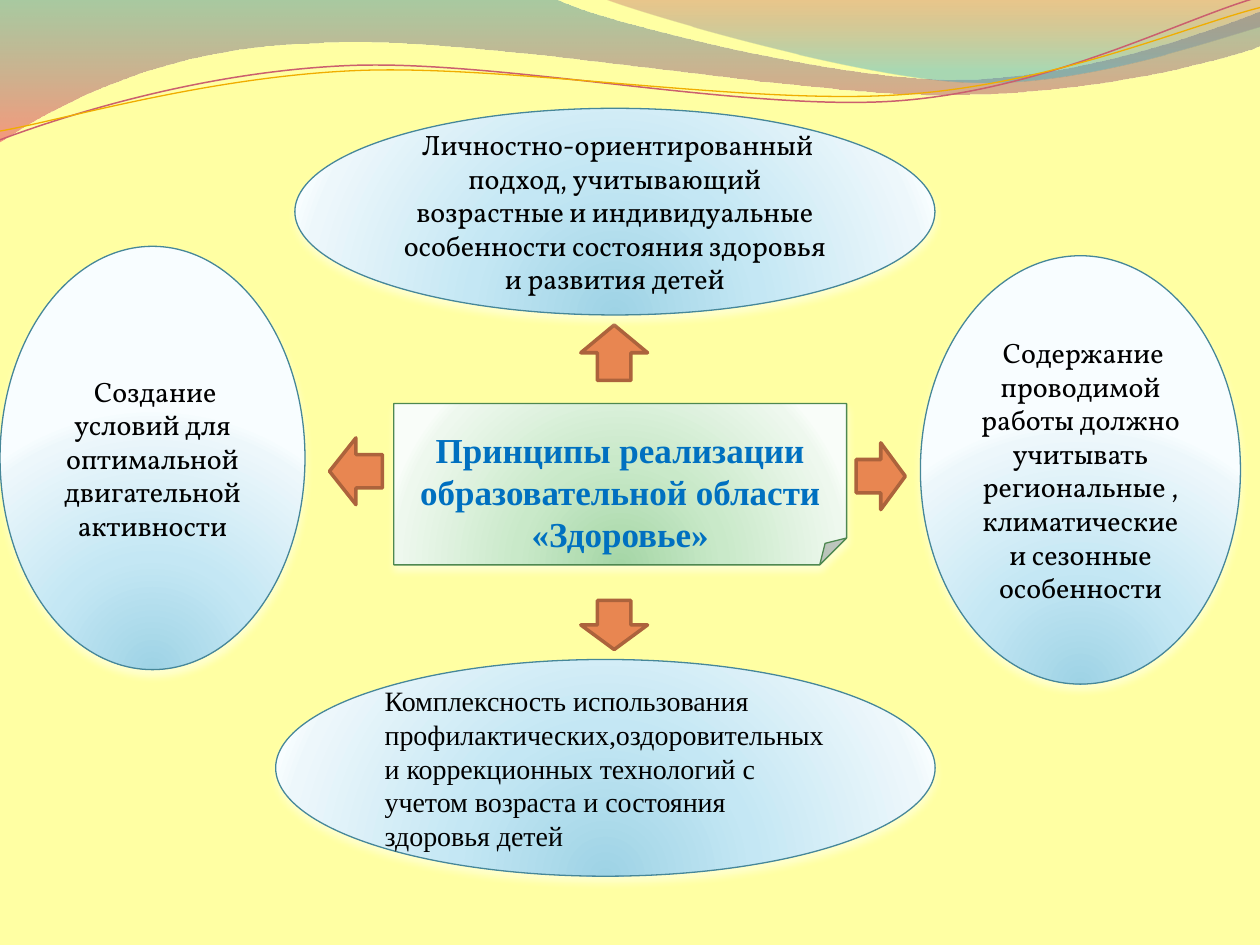
from math import cos, radians, sin

from lxml.etree import SubElement
from pptx import Presentation
from pptx.dml.color import RGBColor
from pptx.enum.shapes import MSO_SHAPE
from pptx.enum.text import MSO_ANCHOR, PP_ALIGN
from pptx.oxml.ns import qn
from pptx.util import Inches, Pt

# The slide is a grid of 100 columns and 75 rows of square cells.
COLUMNS, ROWS = 100, 75
CELL = Inches(0.1)
STRAND_TILT = -2.7

COLORS = {
    "background": "FFFFA3", "text": "000000", "title": "0070C0",
    "arrow": "E88651", "arrow_line": "AC633C",
    "ellipse_line": "468798", "note_line": "4E8850", "glow": "FFFFFF",
    "rose_line": "CB5F6E", "amber_line": "F0AD00",
}
# Gradient stops: position, colour, opacity (all but the colour in percent)
GRADIENTS = {
    "left_wave": [(0, "3F8A9F", 45), (100, "EF445B", 55)],
    "right_wave": [(0, "B84253", 30), (80, "42ABC7", 45)],
    "ellipse": [(0, "9ED3E5", 100), (43, "C4E7F4", 100),
                (93, "EDF7FB", 100), (100, "F8FDFF", 100)],
    "note": [(0, "A5D6A6", 100), (43, "C9E9C9", 100),
             (93, "EEF8EE", 100), (100, "F9FDF9", 100)],
}
# Outlines in cells: one point is a straight step, three are a Bezier curve.
WAVES = [
    ("left_wave", (0, 0), [
        [(44, -0.1)], [(47.6, 1.7), (66.4, 6.3), (75.8, 6.3)],
        [(85.3, 6.3), (95.8, 2.6), (100, 0.9)], [(100.1, 3.6)],
        [(98.3, 4.4), (87, 7.6), (74.6, 7.5)],
        [(62.2, 7.5), (38.2, 2.8), (25.7, 3.4)],
        [(12.9, 3.6), (4.6, 8.3), (-0.1, 11.3)]]),
    ("right_wave", (47.9, -0.1), [
        [(50.9, 1.1), (68.2, 6.2), (76.9, 6.5)],
        [(85.6, 6.9), (96.1, 3.2), (100, 2.1)], [(100, 0)]]),
]
# Each strand: line colour, width, centre of its tilt, start, curves
STRANDS = [
    ("rose_line", 0.85, (49.9, 5.75), (0, 11.1), [
        [(4.8, 9.3), (15.8, 5.7), (27.7, 5.2)],
        [(39.5, 4.7), (59.3, 8.9), (71.3, 8)],
        [(83.3, 7.1), (93.8, 1.5), (99.8, -0.2)]]),
    ("amber_line", 0.75, (49.95, 5.9), (0, 10.4), [
        [(4.7, 9.6), (16.4, 6.1), (28.3, 5.6)],
        [(40.3, 5.1), (59.7, 8.4), (71.7, 7.5)],
        [(83.6, 6.7), (94.1, 2.1), (100, 0.6)]]),
]
ARROWS = [
    (MSO_SHAPE.UP_ARROW, (25.6, 35.3, 5.3, 4.2), 270),
    (MSO_SHAPE.UP_ARROW, (46.1, 25.8, 5.3, 4.4), 0),
    (MSO_SHAPE.UP_ARROW, (67.25, 35.85, 5.3, 3.9), 90),
    (MSO_SHAPE.DOWN_ARROW, (46.1, 47.65, 5.3, 3.9), 0),
]
TITLE = "Принципы реализации образовательной области «Здоровье»"
PRINCIPLES = [
    (" Создание условий для оптимальной двигательной активности",
     (-4.7, 24.25, 33.6, 24.2), 90, "Vollkorn", PP_ALIGN.CENTER),
    (" Личностно-ориентированный подход, учитывающий возрастные и "
     "индивидуальные особенности состояния здоровья и развития детей",
     (23.4, 8.6, 50.8, 16.4), 0, "Vollkorn", PP_ALIGN.CENTER),
    ("Комплексность использования профилактических,оздоровительных и "
     "коррекционных технологий с учетом возраста и состояния здоровья детей",
     (21.88, 52.34, 52.34, 17.2), 0, "Times New Roman", PP_ALIGN.LEFT),
    (" Содержание проводимой работы должно учитывать региональные , "
     "климатические и сезонные особенности",
     (68.75, 24.6, 34, 25.4), 90, "Vollkorn", PP_ALIGN.CENTER),
]


def color(name):
    return RGBColor.from_string(COLORS[name])


def cells(*counts):
    return [round(count * CELL) for count in counts]


def apply_format(target, values):
    for name, value in values.items():
        setattr(target, name, value)


def set_line(shape, color_name, width):
    shape.line.color.rgb = color(color_name)
    shape.line.width = Pt(width)


def add_color(parent, hex_value, opacity):
    element = SubElement(parent, qn("a:srgbClr"), val=hex_value)
    if opacity < 100:
        SubElement(element, qn("a:alpha"), val=str(opacity * 1000))


def set_gradient(shape, name, radial):
    """Fill downwards, or in circles around a point below the shape."""
    shape.fill.solid()
    solid = shape.element.spPr.find(qn("a:solidFill"))
    gradient = SubElement(shape.element.spPr, qn("a:gradFill"), rotWithShape="1")
    stops = SubElement(gradient, qn("a:gsLst"))
    for position, hex_value, opacity in GRADIENTS[name]:
        stop = SubElement(stops, qn("a:gs"), pos=str(position * 1000))
        add_color(stop, hex_value, opacity)
    if radial:
        circle = SubElement(gradient, qn("a:path"), path="circle")
        SubElement(circle, qn("a:fillToRect"),
                   l="50000", t="130000", r="50000", b="-30000")
    else:
        SubElement(gradient, qn("a:lin"), ang="5400000", scaled="0")
    solid.getparent().replace(solid, gradient)


def set_glow(shape):
    """Add a pale shadow just below the shape."""
    effects = shape.element.spPr.find(qn("a:effectLst"))
    shadow = SubElement(effects, qn("a:outerShdw"), blurRad=str(Pt(4.5)),
                        dist=str(Pt(3)), dir="5400000", rotWithShape="0")
    add_color(shadow, COLORS["glow"], 48)


def turn(point, center, degrees):
    x, y = point[0] - center[0], point[1] - center[1]
    cosine, sine = cos(radians(degrees)), sin(radians(degrees))
    return (center[0] + x * cosine - y * sine, center[1] + x * sine + y * cosine)


def add_outline(slide, start, segments, close):
    """Lay out all points as steps, then join each three into one curve."""
    builder = slide.shapes.build_freeform(*cells(*start))
    points = [cells(*point) for segment in segments for point in segment]
    builder.add_line_segments(points, close=close)
    shape = builder.convert_to_shape()
    shape.shadow.inherit = False
    steps = iter(list(shape.element.spPr.iter(qn("a:lnTo"))))
    for segment in segments:
        group = [next(steps) for _ in segment]
        if len(group) == 3:
            group[0].addprevious(curve := SubElement(
                group[0].getparent(), qn("a:cubicBezTo")))
            for step in group:
                curve.append(step[0])
                step.getparent().remove(step)
    return shape


def add_strand(slide, color_name, width, center, start, segments):
    level = [[turn(point, center, -STRAND_TILT) for point in segment]
             for segment in segments]
    strand = add_outline(slide, turn(start, center, -STRAND_TILT), level, False)
    strand.rotation = STRAND_TILT
    strand.fill.background()
    set_line(strand, color_name, width)


def add_preset(slide, kind, box, rotation=0):
    shape = slide.shapes.add_shape(kind, *cells(*box))
    shape.rotation = rotation
    shape.shadow.inherit = False
    return shape


def add_card(slide, kind, box, style, rotation=0):
    """Add a shape with a radial gradient, a thin line and a pale shadow."""
    shape = add_preset(slide, kind, box, rotation)
    set_gradient(shape, style, radial=True)
    set_line(shape, f"{style}_line", 0.75)
    set_glow(shape)
    return shape


def set_text(shape, text, alignment, font_values, color_name):
    frame = shape.text_frame
    apply_format(frame, {"word_wrap": True, "vertical_anchor": MSO_ANCHOR.MIDDLE})
    paragraph = frame.paragraphs[0]
    paragraph.alignment = alignment
    run = paragraph.add_run()
    run.text = text
    apply_format(run.font, font_values)
    run.font.color.rgb = color(color_name)


def add_principle(slide, text, box, rotation, font_name, alignment):
    shape = add_card(slide, MSO_SHAPE.OVAL, box, "ellipse", rotation)
    set_text(shape, text, alignment, {"name": font_name, "size": Pt(16)}, "text")
    if rotation:
        shape.element.txBody.find(qn("a:bodyPr")).set("vert", "vert270")


def add_title(slide):
    box = (31.25, 32.03, 35.94, 12.8)
    shape = add_card(slide, MSO_SHAPE.FOLDED_CORNER, box, "note")
    set_text(shape, TITLE, PP_ALIGN.CENTER,
             {"name": "Times New Roman", "size": Pt(20), "bold": True}, "title")
    shape.text_frame.margin_top = Inches(0.38)


def add_arrow(slide, kind, box, rotation):
    shape = add_preset(slide, kind, box, rotation)
    shape.fill.solid()
    shape.fill.fore_color.rgb = color("arrow")
    set_line(shape, "arrow_line", 2)


def add_backdrop(slide):
    slide.background.fill.solid()
    slide.background.fill.fore_color.rgb = color("background")
    for name, start, segments in WAVES:
        wave = add_outline(slide, start, segments, close=True)
        set_gradient(wave, name, radial=False)
        wave.line.fill.background()
    for strand in STRANDS:
        add_strand(slide, *strand)


def main():
    presentation = Presentation()
    apply_format(presentation, {"slide_width": COLUMNS * CELL,
                                "slide_height": ROWS * CELL})
    slide = presentation.slides.add_slide(presentation.slide_layouts[6])
    add_backdrop(slide)
    add_title(slide)
    for arrow in ARROWS:
        add_arrow(slide, *arrow)
    for principle in PRINCIPLES:
        add_principle(slide, *principle)
    presentation.save("out.pptx")


if __name__ == "__main__":
    main()
